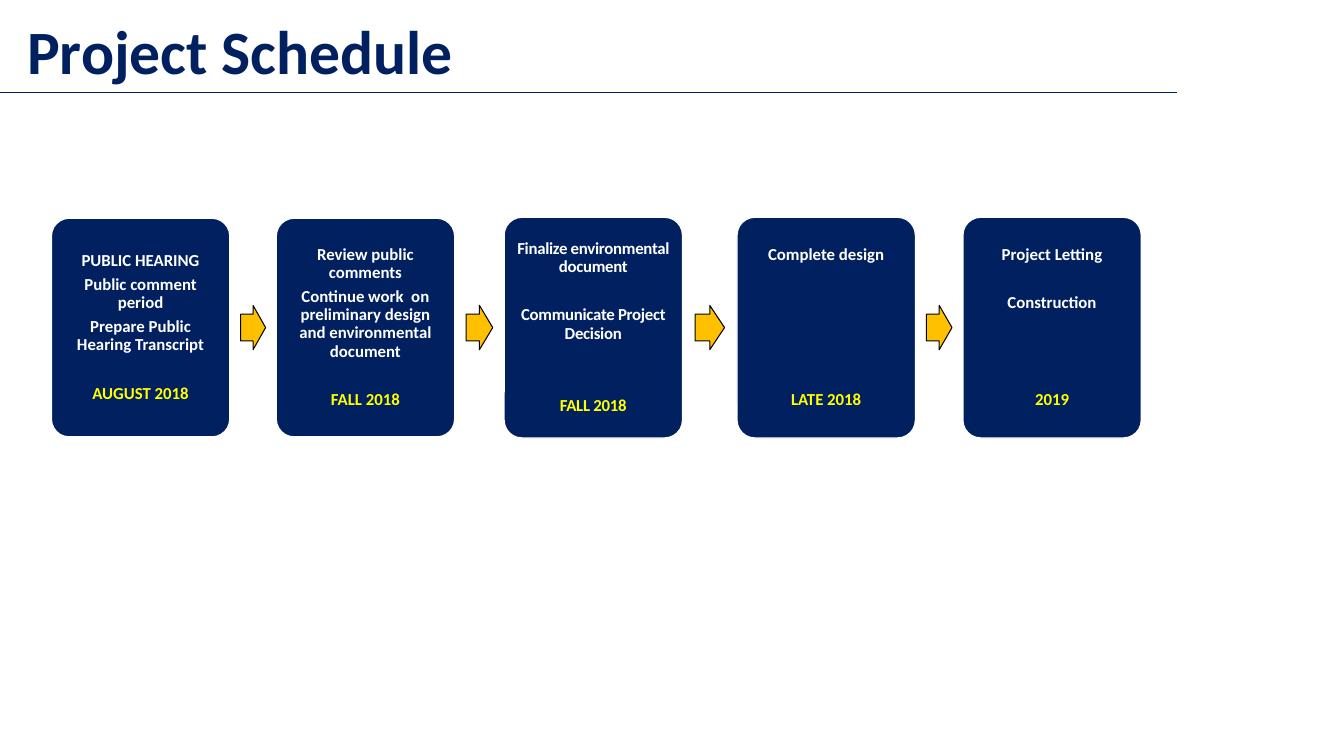
from pptx import Presentation
from pptx.dml.color import RGBColor
from pptx.enum.shapes import MSO_CONNECTOR, MSO_SHAPE
from pptx.enum.text import MSO_ANCHOR, PP_ALIGN
from pptx.oxml.ns import qn
from pptx.util import Inches, Pt
from lxml import etree

CARD, ARROW = MSO_SHAPE.ROUNDED_RECTANGLE, MSO_SHAPE.RIGHT_ARROW
STRAIGHT = MSO_CONNECTOR.STRAIGHT
MIDDLE, BOTTOM = MSO_ANCHOR.MIDDLE, MSO_ANCHOR.BOTTOM
CENTER = PP_ALIGN.CENTER

COLORS = {"navy": "002060", "white": "FFFFFF", "gold": "FFC000",
          "yellow": "FFFF00", "black": "000000"}

# Each step: left, height, letter spacing, date, then (text, open lines below)
STEPS = [
    (0.51, 2.17, 0, "AUGUST 2018",
     [("PUBLIC HEARING", 0), ("Public comment period", 0),
      ("Prepare Public Hearing Transcript", 1)]),
    (2.74, 2.17, 0, "FALL 2018",
     [("Review public comments", 0),
      ("Continue work  on preliminary design and environmental document", 1)]),
    (5.0, 2.19, -0.2, "FALL 2018",
     [("Finalize environmental document", 1),
      ("Communicate Project Decision", 2)]),
    (7.31, 2.19, 0, "LATE 2018", [("Complete design", 5)]),
    (9.55, 2.19, 0, "2019", [("Project Letting", 1), ("Construction", 3)]),
]
WIDTH = 1.77
MID = 3.25
GAP = 4.2     # points between paragraphs
PITCH = 17.4  # points one open line takes up


def color(name):
    return RGBColor.from_string(COLORS[name])


class Deck:
    """Holds the style and the current slide."""

    def __init__(self):
        self.prs = Presentation()
        self.prs.slide_width, self.prs.slide_height = Inches(13.33), Inches(7.5)
        self.slide = self.prs.slides.add_slide(self.prs.slide_layouts[6])
        self.font = "Calibri"

    def label(self, para, text, size, tint, track=0):
        """Add one bold run, with letter spacing in points."""
        para.line_spacing = 0.9
        run = para.add_run()
        run.text = text
        run.font.name, run.font.size, run.font.bold = self.font, Pt(size), True
        run.font.color.rgb = color(tint)
        if track:
            run._r.get_or_add_rPr().set("spc", str(round(track * 100)))

    def title(self, text):
        box = self.slide.shapes.add_textbox(
            Inches(0.17), Inches(0), Inches(13), Inches(0.92))
        frame = box.text_frame
        frame.word_wrap, frame.vertical_anchor = True, BOTTOM
        self.label(frame.paragraphs[0], text, 44, "navy")

    def rule(self, y, right):
        line = self.slide.shapes.add_connector(
            STRAIGHT, Inches(0), Inches(y), Inches(right), Inches(y))
        line.line.color.rgb, line.line.width = color("navy"), Pt(0.5)
        etree.SubElement(line._element.spPr, qn("a:effectLst"))

    def shape(self, kind, left, width, height, fill, edge, weight):
        """Add a preset shape centred on the row of steps."""
        item = self.slide.shapes.add_shape(
            kind, Inches(left), Inches(MID - height / 2),
            Inches(width), Inches(height))
        item.shadow.inherit = False
        item.fill.solid()
        item.fill.fore_color.rgb = color(fill)
        item.line.color.rgb, item.line.width = color(edge), Pt(weight)
        return item

    def card(self, left, height, track, date, notes):
        item = self.shape(CARD, left, WIDTH, height, "navy", "white", 1)
        item.adjustments[0] = 0.1
        frame = item.text_frame
        frame.word_wrap, frame.vertical_anchor = True, MIDDLE
        frame.margin_left = frame.margin_right = Inches(0.05)
        frame.margin_top = frame.margin_bottom = Inches(0.05)
        rows = [(text, gap, "white") for text, gap in notes]
        for i, (text, gap, tint) in enumerate(rows + [(date, 0, "yellow")]):
            para = frame.add_paragraph() if i else frame.paragraphs[0]
            para.alignment = CENTER
            para.space_after = Pt(GAP + gap * PITCH)
            self.label(para, text, 12, tint, track)

    def arrow(self, start, end):
        """Centre an arrow in the gap between two cards."""
        width = 0.54 * (end - start)
        left = (start + end - width) / 2
        item = self.shape(ARROW, left, width, 0.44, "gold", "black", 0.75)
        item.adjustments[0], item.adjustments[1] = 0.6, 0.5


def main():
    deck = Deck()
    deck.rule(0.92, 11.67)
    deck.title("Project Schedule")
    for i, step in enumerate(STEPS):
        if i:
            deck.arrow(STEPS[i - 1][0] + WIDTH, step[0])
        deck.card(*step)
    deck.prs.save("out.pptx")


if __name__ == "__main__":
    main()
